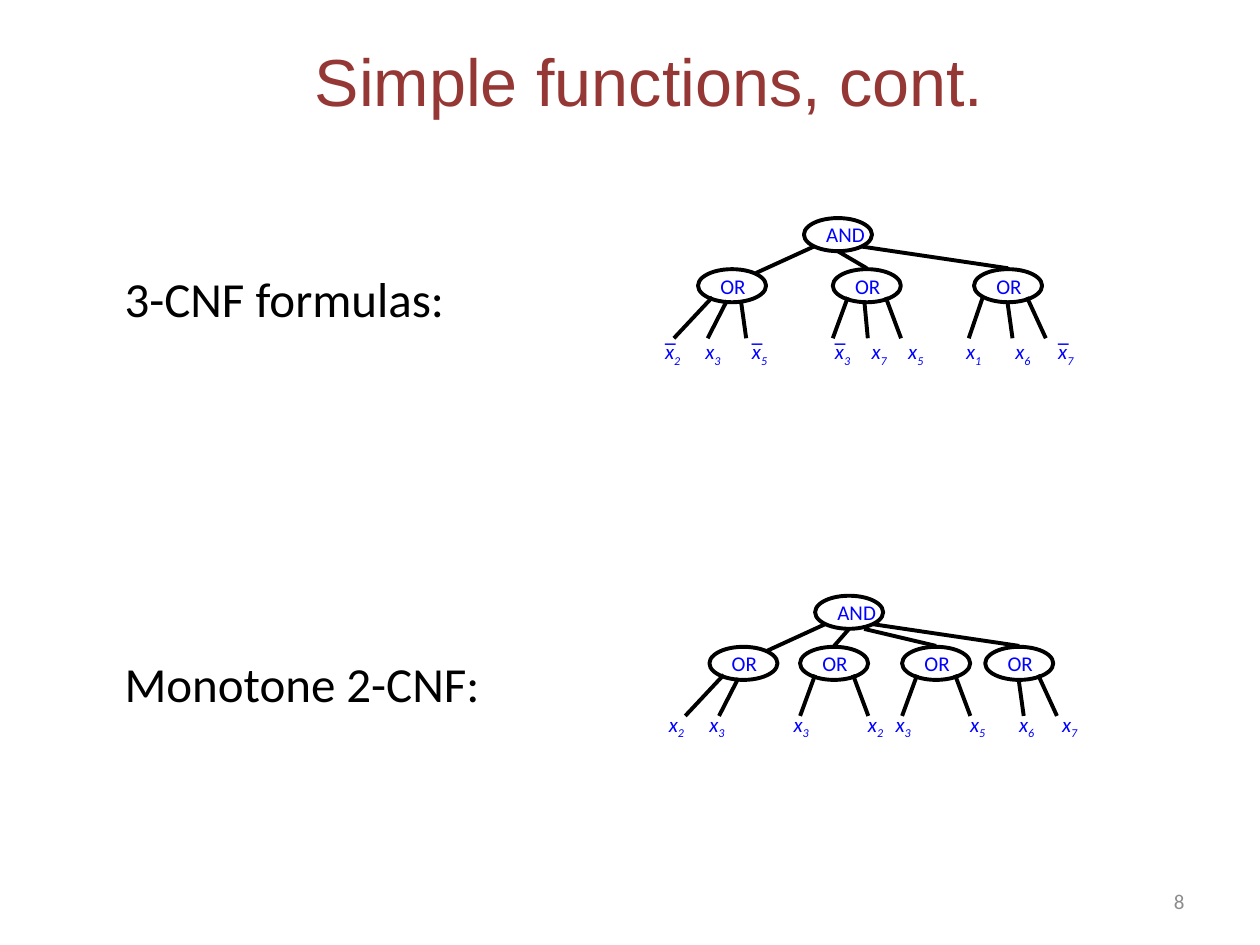
from pptx import Presentation
from pptx.dml.color import RGBColor
from pptx.enum.shapes import MSO_CONNECTOR, MSO_SHAPE
from pptx.enum.text import MSO_ANCHOR, MSO_AUTO_SIZE, PP_ALIGN
from pptx.oxml.ns import qn
from pptx.util import Pt
from lxml.etree import SubElement

BLACK, WHITE, BLUE, RED, GRAY = "000000", "FFFFFF", "0000FF", "953735", "8C8C8C"
TITLE = "Simple functions, cont."
PAGE_NUMBER = "8"
HEADINGS = [("3-CNF formulas:", 149.8, 199.4), ("Monotone 2-CNF:", 370.1, 219.6)]

GATE_WIDTH, GATE_HEIGHT, GATE_DROP = 38.9, 18.9, 29.2
LEAF_END = 39.5
LABEL_WIDTH, LABEL_HEIGHT = 25.2, 21.6
BAR_WIDTH, BAR_RISE = 20.2, 10.1

SLANTED, INNER, STEEP = (8.2, -13.8), (16.5, 5.5), (24.5, 27.5)
LEFT, MIDDLE, RIGHT = (8.6, 0), (18, 20), (30.2, 39)
LEFT_SHORT, CENTER, RIGHT_LONG = (5, -3), (19, 22), (30.2, 41)

# gate: left, start of its edge on the root, leaves (stem, label left, index, negated)
TREES = [
    {"left": 459.4, "top": 124.6, "label_drop": 65.5, "gates": [
        (398.9, 5.7, [(SLANTED, 373, "2", True), (INNER, 396, "3", False),
                      (STEEP, 422.6, "5", True)]),
        (475.9, 19.4, [(LEFT, 470, "3", True), (MIDDLE, 491, "7", False),
                       (RIGHT, 511.9, "5", False)]),
        (556.6, 33, [(LEFT_SHORT, 545, "1", False), (CENTER, 573.1, "6", False),
                     (RIGHT_LONG, 597.6, "7", True)]),
    ]},
    {"left": 465.8, "top": 340.4, "label_drop": 62.8, "gates": [
        (405.4, 5.7, [(SLANTED, 375.1, "2", False), (INNER, 398.2, "3", False)]),
        (457.2, 19.4, [(LEFT, 446.4, "3", False), (RIGHT, 488.9, "2", False)]),
        (515.5, 28, [(LEFT, 504.7, "3", False), (RIGHT, 547.2, "5", False)]),
        (563, 33, [(CENTER, 575.3, "6", False), (RIGHT_LONG, 599.8, "7", False)]),
    ]},
]


def color(hex_string):
    return RGBColor.from_string(hex_string)


def style(para, size, hex_string, font="Calibri", align=PP_ALIGN.LEFT):
    para.alignment = align
    para.font.size = Pt(size)
    para.font.name = font
    para.font.color.rgb = color(hex_string)


def add_text(page, text, left, top, width, height, size, hex_string,
             font="Calibri", align=PP_ALIGN.LEFT, wrap=False):
    box = page.shapes.add_textbox(Pt(left), Pt(top), Pt(width), Pt(height))
    frame = box.text_frame
    frame.word_wrap = wrap
    if wrap:
        frame.vertical_anchor = MSO_ANCHOR.MIDDLE
    else:
        frame.auto_size = MSO_AUTO_SIZE.SHAPE_TO_FIT_TEXT
    para = frame.paragraphs[0]
    para.add_run().text = text
    style(para, size, hex_string, font, align)
    return para


def add_gate(page, text, left, top):
    gate = page.shapes.add_shape(MSO_SHAPE.FLOWCHART_CONNECTOR, Pt(left), Pt(top),
                                 Pt(GATE_WIDTH), Pt(GATE_HEIGHT))
    gate.shadow.inherit = False
    gate.fill.solid()
    gate.fill.fore_color.rgb = color(WHITE)
    gate.line.color.rgb = color(BLACK)
    gate.line.width = Pt(2.25)
    frame = gate.text_frame
    frame.word_wrap = False
    frame.vertical_anchor = MSO_ANCHOR.MIDDLE
    frame.text = text
    style(frame.paragraphs[0], 12, BLUE)


def add_line(page, x1, y1, x2, y2):
    line = page.shapes.add_connector(MSO_CONNECTOR.STRAIGHT, Pt(x1), Pt(y1), Pt(x2), Pt(y2))
    line.line.color.rgb = color(BLACK)
    line.line.width = Pt(2.25)
    SubElement(line._element.spPr, qn("a:effectLst"))


def add_variable(page, left, top, index, negated):
    para = add_text(page, "x", left, top, LABEL_WIDTH, LABEL_HEIGHT, 12, BLUE)
    para.font.italic = True
    span = para.add_run()
    span.text = index
    span.font._element.set("baseline", "-25000")
    if negated:
        bar = add_text(page, "_", left, top - BAR_RISE, BAR_WIDTH, LABEL_HEIGHT,
                       12, BLUE, "Times New Roman")
        bar.font.bold = True


def add_tree(page, tree):
    root_left, top = tree["left"], tree["top"]
    gate_top = top + GATE_DROP
    add_gate(page, "AND", root_left, top)
    for number, (left, root_offset, leaves) in enumerate(tree["gates"]):
        add_gate(page, "OR", left, gate_top)
        root_drop = 19 if 15 < root_offset < 30 else 16.3
        gate_offset, gate_rise = (33.1, -2.2) if number == 0 else (GATE_WIDTH / 2, 0.5)
        add_line(page, root_left + root_offset, top + root_drop,
                 left + gate_offset, gate_top - gate_rise)
        for (start, end), label_left, index, negated in leaves:
            start_drop = 18 if 12 < start < 27 else 16
            add_line(page, left + start, gate_top + start_drop,
                     left + end, gate_top + LEAF_END)
            add_variable(page, label_left, top + tree["label_drop"], index, negated)


def main():
    deck = Presentation()
    deck.slide_width, deck.slide_height = Pt(720), Pt(540)
    page = deck.slides.add_slide(deck.slide_layouts[6])
    add_text(page, TITLE, 36, 0.7, 670.3, 90, 38, RED, "Arial", PP_ALIGN.CENTER, True)
    for text, top, width in HEADINGS:
        add_text(page, text, 64.1, top, width, 41, 28, BLACK)
    for tree in TREES:
        add_tree(page, tree)
    add_text(page, PAGE_NUMBER, 516.2, 500.4, 167.8, 28.8, 12, GRAY,
             align=PP_ALIGN.RIGHT, wrap=True)
    deck.save("out.pptx")


if __name__ == "__main__":
    main()
